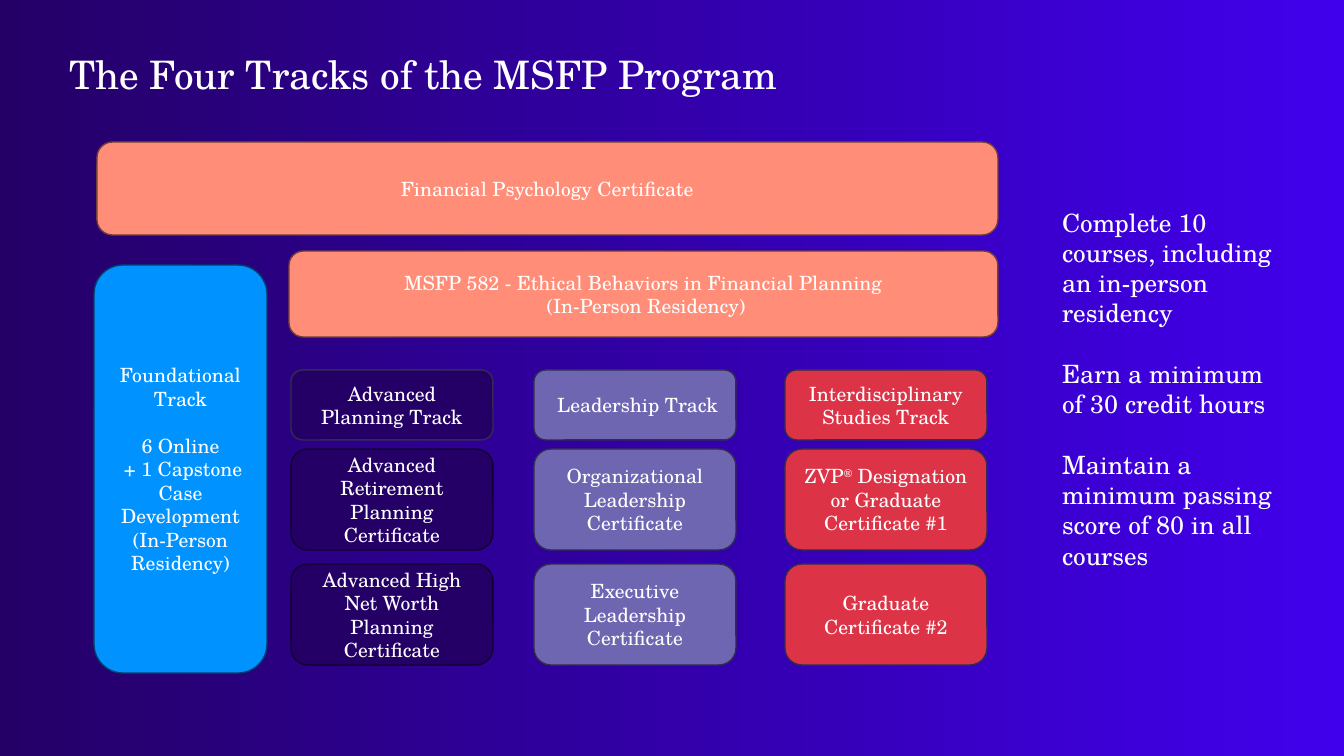
from dataclasses import dataclass

from pptx import Presentation
from pptx import util as u
from pptx.dml.color import RGBColor
from pptx.enum import shapes, text

EMU_PER_PX = 914400 / 100.8


@dataclass(frozen=True)
class Theme:
    font: str = "TeX Gyre Schola"
    title_size: int = 28
    body_size: int = 18
    box_size: int = 14
    white: str = "FFFFFF"
    background_start: str = "4100EC"
    background_end: str = "240066"
    coral: str = "FF8D78"
    coral_line: str = "703E35"
    blue: str = "0093FF"
    blue_line: str = "004070"
    navy: str = "240066"
    navy_line: str = "10002D"
    violet: str = "6F66B1"
    red: str = "DC3346"
    track_line: str = "312D4E"


THEME = Theme()


def px(length):
    return u.Emu(round(length * EMU_PER_PX))


def rgb(value):
    return RGBColor.from_string(value)


def write_text(frame, paragraphs, size, align=text.PP_ALIGN.LEFT,
               anchor=text.MSO_ANCHOR.TOP, gap=0, superscript=None):
    frame.word_wrap = True
    frame.auto_size = text.MSO_AUTO_SIZE.NONE
    frame.vertical_anchor = anchor
    for index, content in enumerate(paragraphs):
        paragraph = frame.paragraphs[0] if index == 0 else frame.add_paragraph()
        paragraph.alignment = align
        paragraph.line_spacing = 1.0
        paragraph.space_before = u.Pt(gap if index else 0)
        paragraph.space_after = u.Pt(0)
        if superscript:
            before, mark, after = content.partition(superscript)
            for part in (before, mark, after):
                if part:
                    paragraph.add_run().text = part
        else:
            paragraph.text = content
        for run in paragraph.runs:
            run.font.name = THEME.font
            run.font.size = u.Pt(size)
            run.font.color.rgb = rgb(THEME.white)
            if run.text == superscript:
                run.font._element.set("baseline", "30000")


def place(shape, left, top, width, height):
    shape.left, shape.top = px(left), px(top)
    shape.width, shape.height = px(width), px(height)


def add_box(slide, bounds, paragraphs, fill, line, **text_format):
    shape = slide.shapes.add_shape(
        shapes.MSO_SHAPE.ROUNDED_RECTANGLE, *map(px, bounds))
    shape.shadow.inherit = False
    shape.fill.solid()
    shape.fill.fore_color.rgb = rgb(fill)
    shape.line.color.rgb = rgb(line)
    shape.line.width = u.Pt(1)
    write_text(shape.text_frame, paragraphs, THEME.box_size,
               align=text.PP_ALIGN.CENTER, anchor=text.MSO_ANCHOR.MIDDLE,
               **text_format)


def paint_background(slide):
    fill = slide.background.fill
    fill.gradient()
    fill.gradient_angle = 180
    colors = (THEME.background_start, THEME.background_end)
    for stop, color in zip(fill.gradient_stops, colors):
        stop.color.rgb = rgb(color)


def add_title(slide, content):
    title = slide.shapes.title
    place(title, 59, 45, 1164, 58)
    write_text(title.text_frame, [content], THEME.title_size)


def add_requirements(slide, paragraphs):
    body = slide.placeholders[1]
    place(body, 1052, 202, 247, 407)
    write_text(body.text_frame, paragraphs, THEME.body_size, gap=21.7)
    for paragraph in body.text_frame.paragraphs:
        properties = paragraph._p.get_or_add_pPr()
        properties.set("marL", "0")
        properties.set("indent", "0")
        bullet = properties.makeelement(
            "{http://schemas.openxmlformats.org/drawingml/2006/main}buNone", {})
        properties.append(bullet)


def add_tracks(slide):
    rows = [(370, 70), (449, 101), (564, 101)]
    tracks = [
        (291, THEME.navy, THEME.navy_line, [
            ["Advanced Planning Track"],
            ["Advanced Retirement Planning Certificate"],
            ["Advanced High Net Worth Planning", "Certificate"]]),
        (534, THEME.violet, THEME.track_line, [
            [" Leadership Track"],
            ["Organizational Leadership", "Certificate"],
            ["Executive Leadership", "Certificate"]]),
        (785, THEME.red, THEME.track_line, [
            ["Interdisciplinary Studies Track"],
            ["ZVP® Designation or Graduate Certificate #1"],
            ["Graduate Certificate #2"]]),
    ]
    for left, fill, line, boxes in tracks:
        for row, ((top, height), paragraphs) in enumerate(zip(rows, boxes)):
            add_box(slide, (left, top, 202, height), paragraphs, fill,
                    line if row else THEME.track_line, superscript="®")


def main():
    presentation = Presentation()
    presentation.slide_width = px(1344)
    presentation.slide_height = px(756)
    slide = presentation.slides.add_slide(presentation.slide_layouts[1])

    paint_background(slide)
    add_title(slide, "The Four Tracks of the MSFP Program")
    add_box(slide, (97, 142, 901, 93), ["Financial Psychology Certificate"],
            THEME.coral, THEME.coral_line)
    add_box(slide, (289, 251, 709, 86),
            ["MSFP 582 - Ethical Behaviors in Financial Planning\v"
             " (In-Person Residency)"],
            THEME.coral, THEME.coral_line)
    add_box(slide, (94, 265, 173, 408),
            ["Foundational Track",
             "6 Online\v + 1 Capstone Case Development (In-Person Residency)"],
            THEME.blue, THEME.blue_line, gap=16.8)
    add_tracks(slide)
    add_requirements(slide, [
        "Complete 10 courses, including an in-person residency",
        "Earn a minimum of 30 credit hours",
        "Maintain a minimum passing score of 80 in all courses",
    ])
    presentation.save("out.pptx")


if __name__ == "__main__":
    main()
